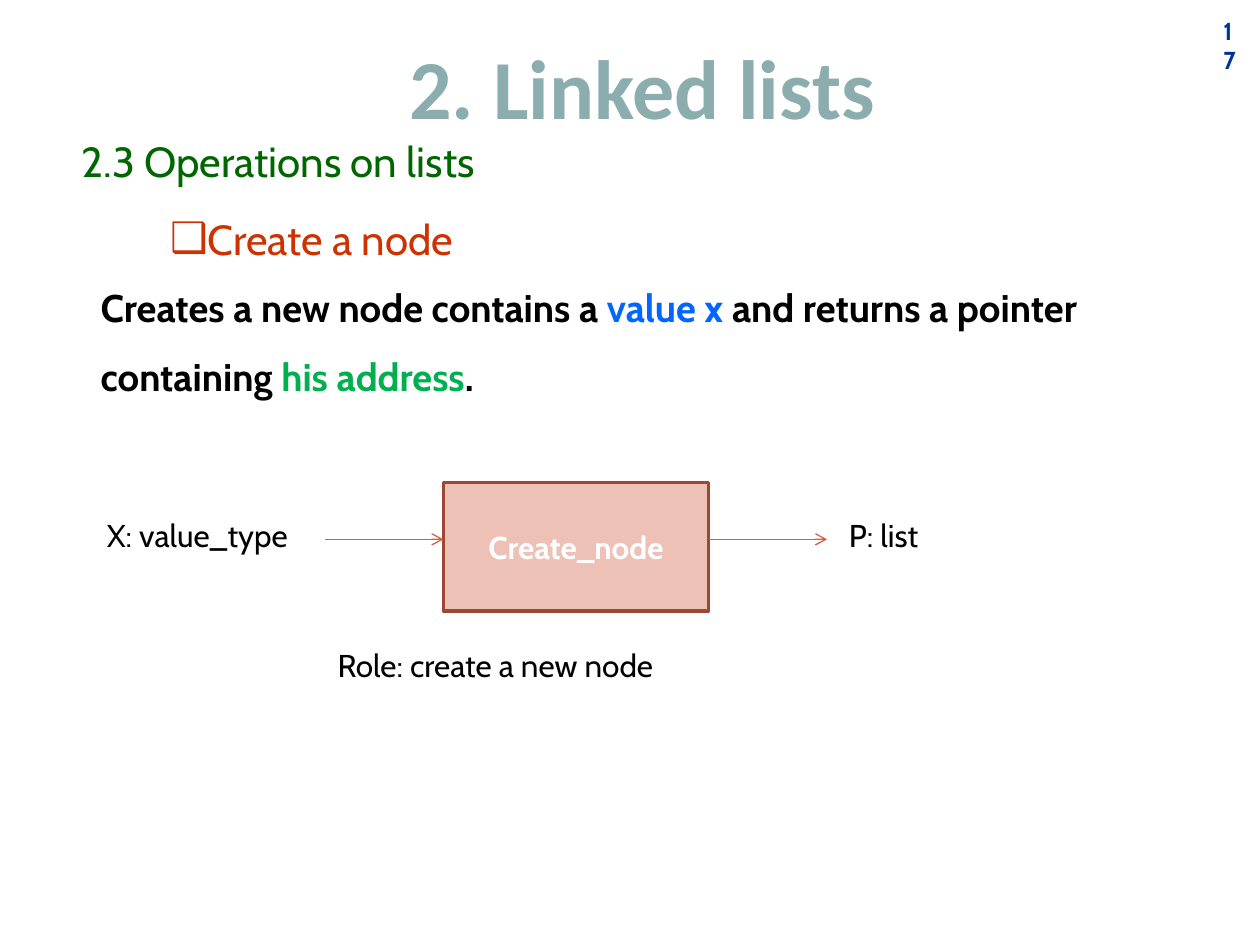
from lxml import etree
from pptx import Presentation
from pptx import util as u
from pptx.dml.color import RGBColor
from pptx.enum import shapes, text
from pptx.oxml.ns import qn

COLORS = {
    "number": "003399", "title": "8CADAE", "section": "006600",
    "topic": "CC3300", "black": "000000", "value": "0066FF",
    "address": "00B050", "white": "FFFFFF", "box": "EDC1B6",
    "border": "9B4936", "arrow": "D05F44",
}
MIDDLE, TOP = text.MSO_ANCHOR.MIDDLE, text.MSO_ANCHOR.TOP
CENTER, LEFT = text.PP_ALIGN.CENTER, text.PP_ALIGN.LEFT


def rgb(name):
    return RGBColor.from_string(COLORS[name])


class SlideBuilder:
    """Holds the text style and the current slide."""

    def __init__(self, slide, font="Cabin"):
        self.s = slide
        self.font = font

    def add_text(self, sp, runs, size, bold=False, font=None, align=LEFT,
                 anchor=MIDDLE, spacing=1.0, bullet=None):
        tf = sp.text_frame
        tf.word_wrap = True
        tf.auto_size = text.MSO_AUTO_SIZE.NONE
        tf.vertical_anchor = anchor
        p = tf.paragraphs[0]
        if bullet:
            pPr = p._p.get_or_add_pPr()
            pPr.set("marL", "0")
            pPr.set("indent", "0")
            etree.SubElement(pPr, qn("a:buChar")).set("char", bullet)
        p.alignment = align
        p.line_spacing = spacing
        p.space_before = u.Pt(0)
        for words, color in runs:
            r = p.add_run()
            r.text = words
            r.font.name = font or self.font
            r.font.size = u.Pt(size)
            r.font.bold = bold
            r.font.color.rgb = rgb(color)

    def placeholder(self, sp, box, runs, size, **style):
        sp.left, sp.top, sp.width, sp.height = map(u.Pt, box)
        self.add_text(sp, runs, size, **style)

    def label(self, box, runs, size=18, **style):
        sp = self.s.shapes.add_textbox(*map(u.Pt, box))
        self.add_text(sp, runs, size, **style)

    def box(self, box, runs, size=18):
        sp = self.s.shapes.add_shape(shapes.MSO_SHAPE.RECTANGLE, *map(u.Pt, box))
        sp.shadow.inherit = False
        sp.fill.solid()
        sp.fill.fore_color.rgb = rgb("box")
        sp.line.color.rgb = rgb("border")
        sp.line.width = u.Pt(2)
        self.add_text(sp, runs, size, bold=True, align=CENTER)

    def arrow(self, x, y, length):
        sp = self.s.shapes.add_connector(
            shapes.MSO_CONNECTOR.STRAIGHT, u.Pt(x), u.Pt(y), u.Pt(x + length), u.Pt(y))
        sp.line.color.rgb = rgb("arrow")
        sp.line.width = u.Pt(0.75)
        etree.SubElement(sp.line._get_or_add_ln(), qn("a:tailEnd")).set("type", "arrow")
        etree.SubElement(sp._element.spPr, qn("a:effectLst"))


def main():
    prs = Presentation()
    prs.slide_width, prs.slide_height = u.Pt(720), u.Pt(540)
    s = prs.slides.add_slide(prs.slide_layouts[1])
    b = SlideBuilder(s)

    # Page number and headings
    b.label((692, 13.7, 23, 24.5), [("17", "number")], 14, bold=True)
    b.placeholder(s.shapes.title, (36, 16.5, 662, 65.5), [("2. Linked lists", "title")],
                  48, bold=True, font="Calibri", align=CENTER)
    b.label((39.6, 73.5, 662, 36.5), [("2.3 Operations on lists", "section")], 24)
    b.placeholder(s.placeholders[1], (90, 118, 641, 36.5),
                  [("Create a node", "topic")], 24, bullet="❑")

    # Description
    b.label((50.4, 147.6, 608, 82), [
        ("Creates a new node contains a ", "black"),
        ("value x ", "value"),
        ("and returns a pointer containing ", "black"),
        ("his address", "address"),
        (".", "black"),
    ], 22, bold=True, spacing=1.5)

    # Diagram: input, function, output
    left, width, length, y = 253.4, 151.6, 67.6, 308.2
    b.box((left, 275.8, width, 73.4), [("Create_node", "white")])
    for x in (left - length, left + width):
        b.arrow(x, y, length)
    for x, top, w, words in (
        (54, 291.6, 142.5, "X: value_type"),
        (478, 291.6, 118, "P: list"),
        (185.8, 365.8, 360, "Role: create a new node"),
    ):
        b.label((x, top, w, 28.8), [(words, "black")], anchor=TOP)

    prs.save("out.pptx")


if __name__ == "__main__":
    main()
